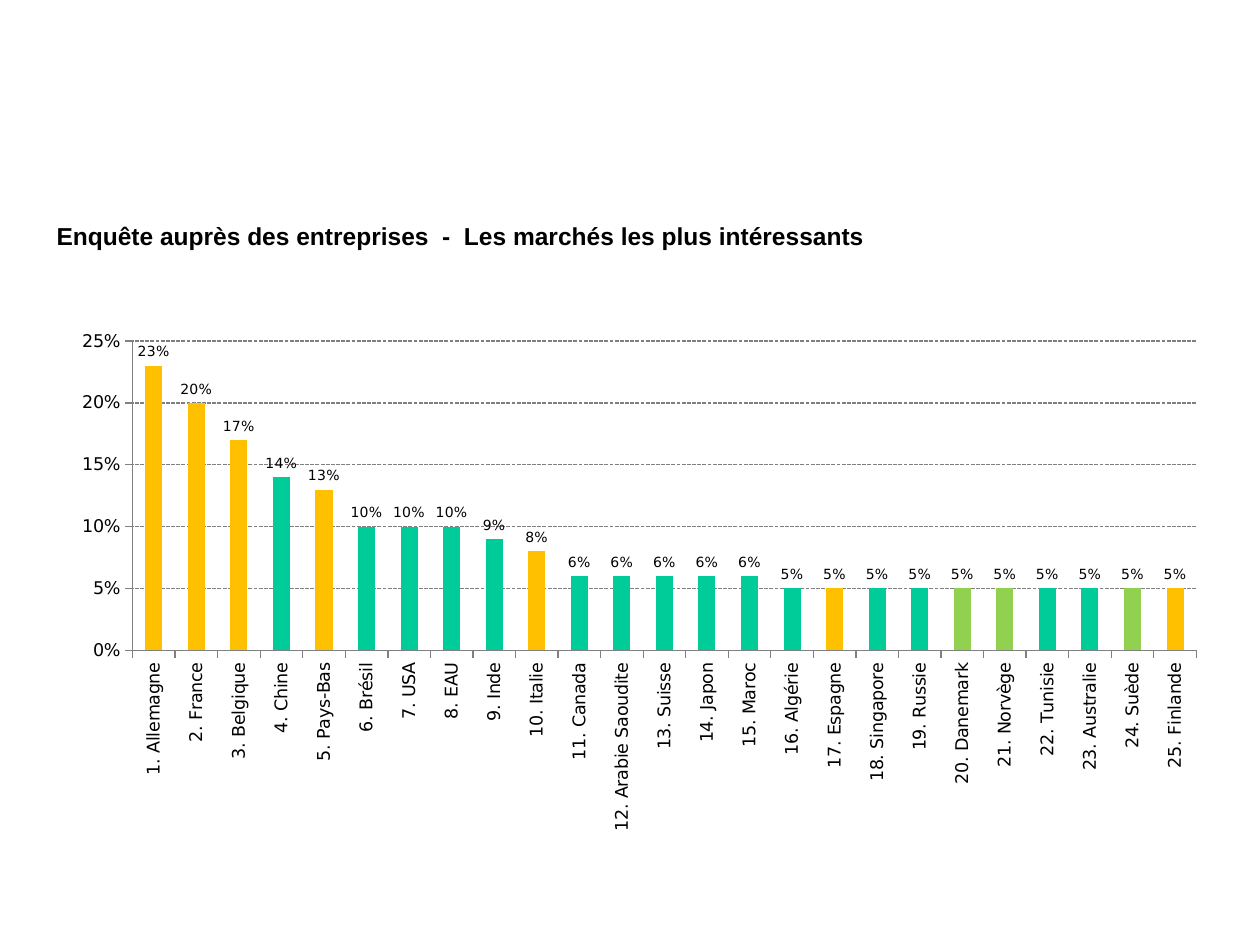
from lxml import etree
from pptx import Presentation
from pptx.chart import data as chart_data
from pptx.dml.color import RGBColor
from pptx.enum import chart as chart_enum, dml, text
from pptx.oxml import ns
from pptx.util import Inches, Pt

COLOURS = {
    "text": "000000",
    "axis": "808080",
    "world": "00CC99",
    "euro": "FFC000",
    "nordic": "92D050",
}

MARKETS = [
    ("Allemagne", 0.23, "euro"),
    ("France", 0.20, "euro"),
    ("Belgique", 0.17, "euro"),
    ("Chine", 0.14, "world"),
    ("Pays-Bas", 0.13, "euro"),
    ("Brésil", 0.10, "world"),
    ("USA", 0.10, "world"),
    ("EAU", 0.10, "world"),
    ("Inde", 0.09, "world"),
    ("Italie", 0.08, "euro"),
    ("Canada", 0.06, "world"),
    ("Arabie Saoudite", 0.06, "world"),
    ("Suisse", 0.06, "world"),
    ("Japon", 0.06, "world"),
    ("Maroc", 0.06, "world"),
    ("Algérie", 0.05, "world"),
    ("Espagne", 0.05, "euro"),
    ("Singapore", 0.05, "world"),
    ("Russie", 0.05, "world"),
    ("Danemark", 0.05, "nordic"),
    ("Norvège", 0.05, "nordic"),
    ("Tunisie", 0.05, "world"),
    ("Australie", 0.05, "world"),
    ("Suède", 0.05, "nordic"),
    ("Finlande", 0.05, "euro"),
]


def colour(name):
    """Return the named palette colour."""
    return RGBColor.from_string(COLOURS[name])


def set_font(font, size, face, bold=False, fill="text"):
    """Apply size, face, weight and colour to a font."""
    font.size = Pt(size)
    font.name = face
    font.bold = bold
    font.color.rgb = colour(fill)


def add_text(page, box, words, align=text.PP_ALIGN.LEFT, **style):
    """Place one line of formatted text in the given box."""
    frame = page.shapes.add_textbox(*map(Inches, box)).text_frame
    frame.word_wrap = False
    frame.auto_size = text.MSO_AUTO_SIZE.SHAPE_TO_FIT_TEXT
    frame.vertical_anchor = text.MSO_ANCHOR.MIDDLE
    para = frame.paragraphs[0]
    para.alignment = align
    span = para.add_run()
    span.text = words
    set_font(span.font, **style)


def set_plot_area(chart, **fractions):
    """Fix the inner plot area as fractions of the chart."""
    plot_area = chart.plots[0]._element.getparent()
    for old in plot_area.findall(ns.qn("c:layout")):
        plot_area.remove(old)
    layout = etree.Element(ns.qn("c:layout"))
    manual = etree.SubElement(layout, ns.qn("c:manualLayout"))
    settings = {"layoutTarget": "inner", "xMode": "edge", "yMode": "edge", **fractions}
    for tag, value in settings.items():
        etree.SubElement(manual, ns.qn(f"c:{tag}")).set("val", str(value))
    plot_area.insert(0, layout)


def style_line(line, width=0.75):
    """Give an axis or grid line its grey stroke."""
    line.color.rgb = colour("axis")
    line.width = Pt(width)


def style_axes(chart):
    """Format both axes, the grid and the vertical category labels."""
    for axis in (chart.category_axis, chart.value_axis):
        axis.major_tick_mark = chart_enum.XL_TICK_MARK.OUTSIDE
        axis.minor_tick_mark = chart_enum.XL_TICK_MARK.NONE
        set_font(axis.tick_labels.font, 10, "DejaVu Sans")
        style_line(axis.format.line)
    chart.category_axis.has_major_gridlines = False
    body = chart.category_axis._element.find(ns.qn("c:txPr")).find(ns.qn("a:bodyPr"))
    body.set("rot", "-5400000")
    body.set("vert", "horz")

    values = chart.value_axis
    values.minimum_scale, values.maximum_scale, values.major_unit = 0, 0.25, 0.05
    values.tick_labels.number_format = "0%"
    values.tick_labels.number_format_is_linked = False
    values.has_major_gridlines = True
    grid = values.major_gridlines.format.line
    style_line(grid)
    grid.dash_style = dml.MSO_LINE.SQUARE_DOT


def add_market_chart(page, box):
    """Place the ranked column chart of markets in the given box."""
    table = chart_data.CategoryChartData(number_format="0%")
    table.categories = [f"{rank}. {name}" for rank, (name, _, _) in enumerate(MARKETS, 1)]
    table.add_series("Series 1", [share for _, share, _ in MARKETS])
    chart = page.shapes.add_chart(
        chart_enum.XL_CHART_TYPE.COLUMN_CLUSTERED, *map(Inches, box), table
    ).chart
    chart.has_title = False
    chart.has_legend = False
    set_font(chart.font, 10, "DejaVu Sans")
    set_plot_area(chart, x=0.081, y=0.061, w=0.886, h=0.503)
    style_axes(chart)

    plot = chart.plots[0]
    plot.vary_by_categories = False
    plot.gap_width = 150
    series = plot.series[0]
    series.format.fill.solid()
    series.format.fill.fore_color.rgb = colour("world")
    for index, (_, _, region) in enumerate(MARKETS):
        if region != "world":
            fill = series.points[index].format.fill
            fill.solid()
            fill.fore_color.rgb = colour(region)

    labels = series.data_labels
    labels.show_value = True
    labels.number_format = "0%"
    labels.number_format_is_linked = False
    labels.position = chart_enum.XL_LABEL_POSITION.OUTSIDE_END
    set_font(labels.font, 8, "DejaVu Sans")


def main():
    """Build and save the slide."""
    deck = Presentation()
    deck.slide_width, deck.slide_height = Inches(10), Inches(7.5)
    page = deck.slides.add_slide(deck.slide_layouts[6])
    add_market_chart(page, (0.28, 2.41, 9.53, 4.88))
    add_text(
        page,
        (0.35, 1.7, 6.69, 0.34),
        "Enquête auprès des entreprises  -  Les marchés les plus intéressants",
        align=text.PP_ALIGN.JUSTIFY,
        size=14,
        face="Arial",
        bold=True,
    )
    deck.save("out.pptx")


if __name__ == "__main__":
    main()
